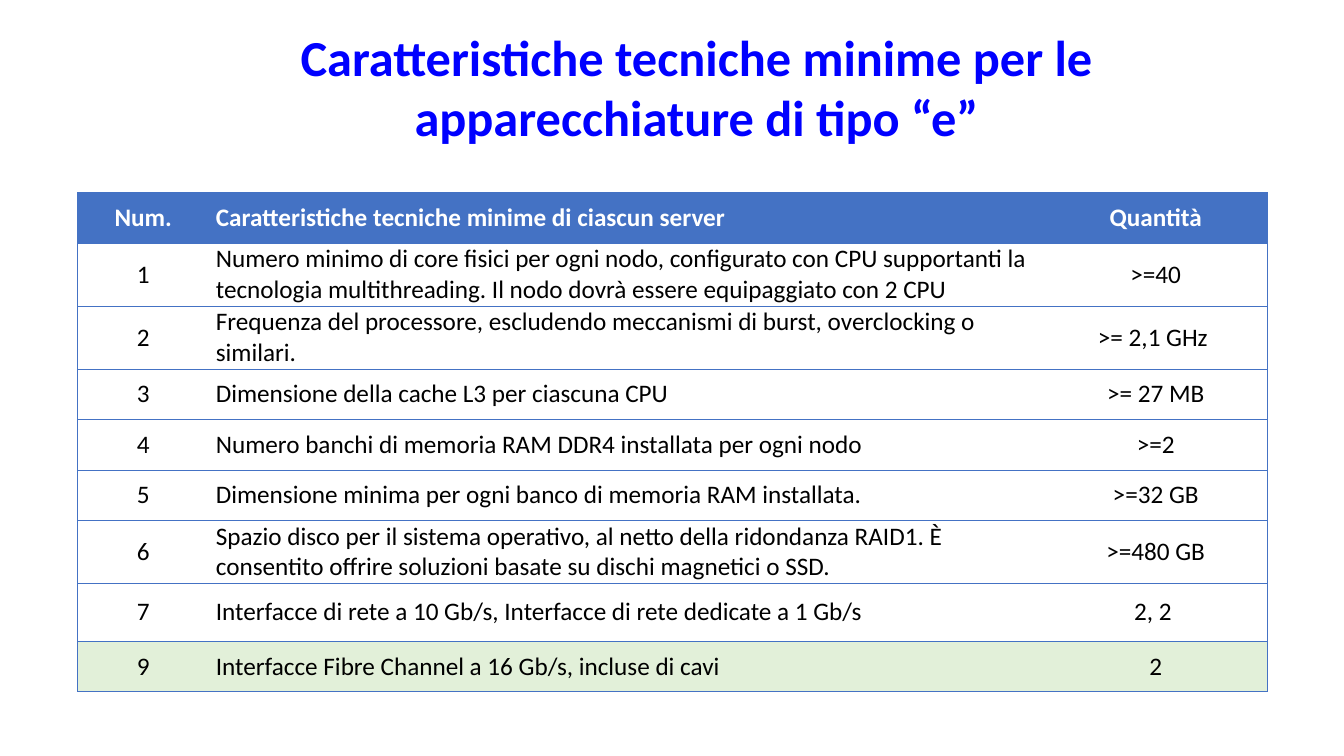
import pptx
import pptx.dml.color
import pptx.enum.text
import pptx.oxml.ns
import pptx.util
from lxml import etree

Cm = pptx.util.Cm
ALIGN = pptx.enum.text.PP_ALIGN
ANCHOR = pptx.enum.text.MSO_ANCHOR

BLUE = "4472C4"
COLUMN_WIDTHS = (3.3, 21.06, 5.61)
COLUMN_ALIGNMENTS = (ALIGN.CENTER, ALIGN.LEFT, ALIGN.CENTER)
HEADER = ("Num.", "Caratteristiche tecniche minime di ciascun server", "Quantità")
REQUIREMENTS = (
    (1.59, "1", "Numero minimo di core fisici per ogni nodo, configurato con CPU supportanti la "
     "tecnologia multithreading. Il nodo dovrà essere equipaggiato con 2 CPU", ">=40"),
    (1.59, "2", "Frequenza del processore, escludendo meccanismi di burst, overclocking o similari.",
     ">= 2,1 GHz "),
    (1.27, "3", "Dimensione della cache L3 per ciascuna CPU", ">= 27 MB"),
    (1.27, "4", "Numero banchi di memoria RAM DDR4 installata per ogni nodo", ">=2"),
    (1.27, "5", "Dimensione minima per ogni banco di memoria RAM installata.", ">=32 GB"),
    (1.59, "6", "Spazio disco per il sistema operativo, al netto della ridondanza RAID1. È consentito "
     "offrire soluzioni basate su dischi magnetici o SSD.", ">=480 GB"),
    (1.46, "7", "Interfacce di rete a 10 Gb/s, Interfacce di rete dedicate a 1 Gb/s", "2, 2 "),
    (1.27, "9", "Interfacce Fibre Channel a 16 Gb/s, incluse di cavi", "2"),
)


def colour(value):
    return pptx.dml.color.RGBColor.from_string(value)


def write_text(frame, text, *, size=18, color="000000", bold=False, align=ALIGN.CENTER):
    para = frame.paragraphs[0]
    para.alignment = align
    span = para.add_run()
    span.text = text
    span.font.name = "Calibri"
    span.font.size = pptx.util.Pt(size)
    span.font.bold = bold
    span.font.color.rgb = colour(color)


def set_borders(cell, visible):
    properties = cell._tc.get_or_add_tcPr()
    name = pptx.oxml.ns.qn
    for side in "LRTB":
        line = etree.SubElement(properties, name(f"a:ln{side}"), w=str(pptx.util.Pt(0.5)))
        if side in visible:
            fill = etree.SubElement(line, name("a:solidFill"))
            etree.SubElement(fill, name("a:srgbClr"), val=BLUE)
        else:
            etree.SubElement(line, name("a:noFill"))


def fill_row(table, index, texts, *, fill=None, **text_format):
    for column, (text, align) in enumerate(zip(texts, COLUMN_ALIGNMENTS)):
        cell = table.cell(index, column)
        cell.margin_left = cell.margin_right = Cm(0.18)
        cell.margin_top = cell.margin_bottom = 0
        cell.vertical_anchor = ANCHOR.MIDDLE
        set_borders(cell, "TB" + {0: "L", 2: "R"}.get(column, ""))
        if fill:
            cell.fill.solid()
            cell.fill.fore_color.rgb = colour(fill)
        else:
            cell.fill.background()
        write_text(cell.text_frame, text, align=align, **text_format)


def place_title(page, text):
    box = page.shapes.title
    box.left, box.top, box.width, box.height = Cm(1.7), Cm(0.53), Cm(30.45), Cm(3.33)
    frame = box.text_frame
    frame.word_wrap = True
    frame.auto_size = pptx.enum.text.MSO_AUTO_SIZE.NONE
    frame.vertical_anchor = ANCHOR.TOP
    frame.margin_left, frame.margin_right = Cm(1.9), Cm(0.63)
    write_text(frame, text, size=36, color="0000FF", bold=True)


def add_requirements(page):
    heights = [1.27] + [row[0] for row in REQUIREMENTS]
    table = page.shapes.add_table(
        len(heights), len(COLUMN_WIDTHS), Cm(1.96), Cm(4.85),
        Cm(sum(COLUMN_WIDTHS)), Cm(sum(heights))).table
    table.horz_banding = False
    for column, width in zip(table.columns, COLUMN_WIDTHS):
        column.width = Cm(width)
    for row, height in zip(table.rows, heights):
        row.height = Cm(height)
    fill_row(table, 0, HEADER, fill=BLUE, color="FFFFFF", bold=True)
    for index, (_, *texts) in enumerate(REQUIREMENTS, start=1):
        fill_row(table, index, texts, fill="E2F0D9" if index == len(REQUIREMENTS) else None)


def main():
    deck = pptx.Presentation()
    deck.slide_width, deck.slide_height = Cm(33.87), Cm(19.05)
    page = deck.slides.add_slide(deck.slide_layouts.get_by_name("Title Only"))
    place_title(page, "Caratteristiche tecniche minime per le apparecchiature di tipo “e”")
    add_requirements(page)
    deck.save("out.pptx")


if __name__ == "__main__":
    main()
